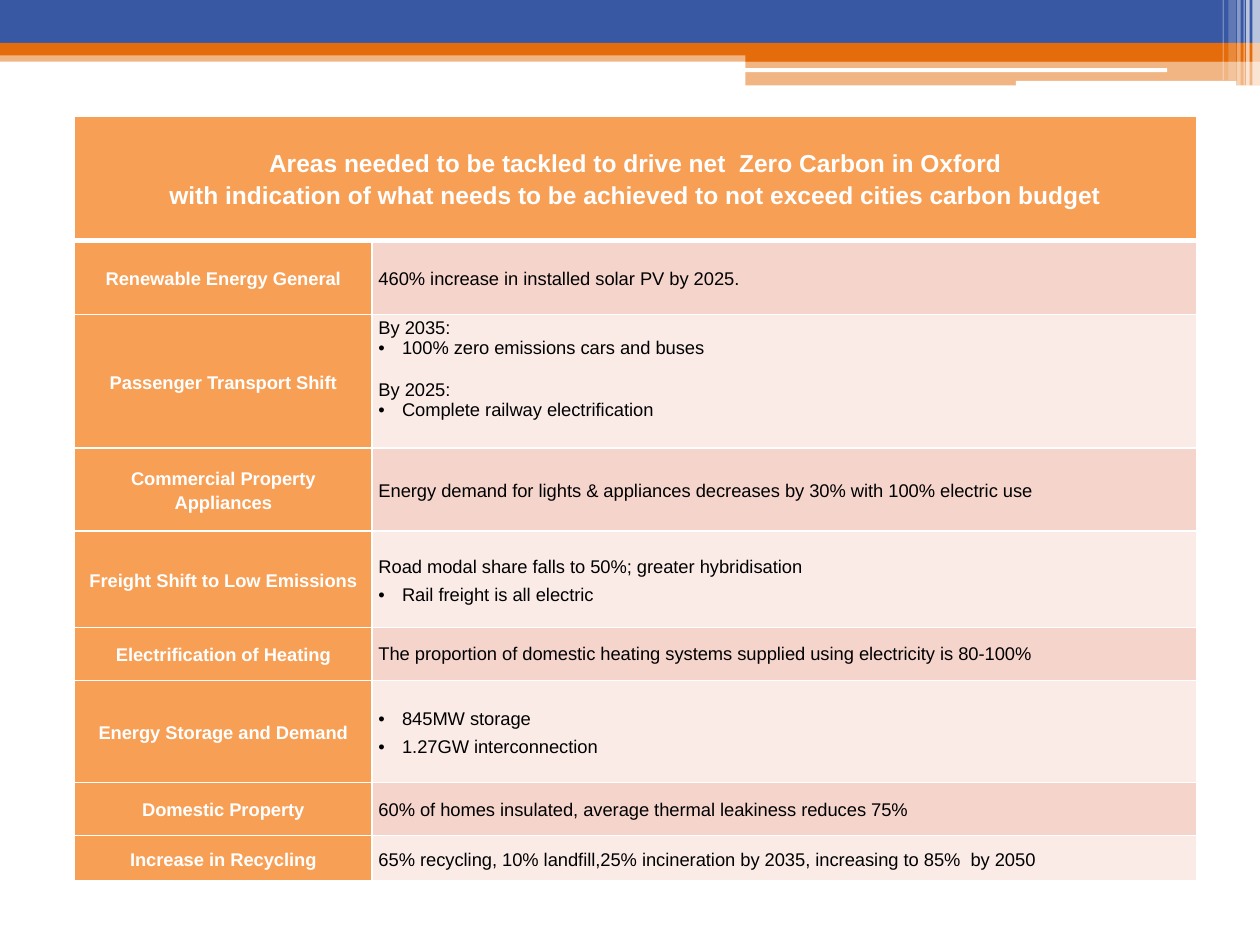
"""Build the Oxford net zero carbon slide with its table of target areas."""
from lxml import etree
from pptx import Presentation
from pptx import util as u
from pptx.dml import color as dml
from pptx.enum import shapes, text
from pptx.oxml import ns

COLOURS = {
    "blue": "3958A4", "orange": "E46C0A", "white": "FFFFFF", "black": "000000",
    "label": "F89F56", "odd": "F5D4CC", "even": "FAEBE7",
}
FONT = "Arial"
SPACING = 1.15
INDENT = 13.5
HEADING = [
    "Areas needed to be tackled to drive net  Zero Carbon in Oxford",
    "with indication of what needs to be achieved to not exceed cities carbon budget",
]
HEADING_HEIGHT = 71.2
COLUMN_WIDTHS = [170, 471]
AREAS = [
    (42.5, "Renewable Energy General",
     [{"words": "460% increase in installed solar PV by 2025."}]),
    (76.2, "Passenger Transport Shift",
     [{"words": "By 2035:", "spacing": 1},
      {"words": "100% zero emissions cars and buses", "bullet": True, "spacing": 1},
      {"words": "By 2025:", "spacing": 1, "before": 12},
      {"words": "Complete railway electrification", "bullet": True, "spacing": 1}]),
    (47.4, "Commercial Property Appliances",
     [{"words": "Energy demand for lights & appliances decreases by 30% with 100% electric use"}]),
    (55.2, "Freight Shift to Low Emissions",
     [{"words": "Road modal share falls to 50%; greater hybridisation", "after": 2.5},
      {"words": "Rail freight is all electric", "bullet": True}]),
    (30.2, "Electrification of Heating",
     [{"words": "The proportion of domestic heating systems supplied using electricity is 80-100%",
       "spacing": 1}]),
    (58.4, "Energy Storage and Demand",
     [{"words": "845MW storage", "bullet": True, "after": 2.4},
      {"words": "1.27GW interconnection", "bullet": True}]),
    (30.2, "Domestic Property",
     [{"words": "60% of homes insulated, average thermal leakiness reduces 75%"}]),
    (25.9, "Increase in Recycling",
     [{"words": "65% recycling, 10% landfill,25% incineration by 2035, increasing to 85%  by 2050"}]),
]
BOTTOM_INSETS = {"Passenger Transport Shift": 14}
BANDS = [
    (0, 28.8, 720, 6.5, "orange", 50),
    (0, 0, 720, 24.5, "blue", 100),
    (0, 24.5, 720, 7.2, "orange", 100),
    (426, 28, 294, 7.2, "orange", 100),
    (426, 34.9, 294, 14, "orange", 50),
]
ROUNDED_BARS = [(425.5, 39, 241.5, 2.2), (580.5, 46.2, 126, 2.8)]
STRIPES = [
    (715.7, 4.3, 49, 65), (712.1, 2, 49, 65), (710.6, 0.7, 49, 60),
    (707, 2, 49, 40), (702, 4.3, 46, 20), (698.7, 0.7, 46, 30),
]


def rgb(name):
    """Return the named palette colour."""
    return dml.RGBColor.from_string(COLOURS[name])


def add_bar(slide, left, top, width, height, colour, opacity=100,
            kind=shapes.MSO_SHAPE.RECTANGLE):
    """Add a borderless bar with the given opacity in percent."""
    shape = slide.shapes.add_shape(
        kind, u.Pt(left), u.Pt(top), u.Pt(width), u.Pt(height))
    shape.shadow.inherit = False
    shape.fill.solid()
    shape.fill.fore_color.rgb = rgb(colour)
    shape.line.fill.background()
    if opacity < 100:
        fill = shape._element.spPr.find(f"{ns.qn('a:solidFill')}/{ns.qn('a:srgbClr')}")
        etree.SubElement(fill, ns.qn("a:alpha"), val=str(opacity * 1000))
    return shape


def add_banner(slide):
    """Draw the coloured banner and the pale stripes at its right end."""
    for band in BANDS:
        add_bar(slide, *band)
    for bar in ROUNDED_BARS:
        add_bar(slide, *bar, "white", kind=shapes.MSO_SHAPE.ROUNDED_RECTANGLE)
    for left, width, height, opacity in STRIPES:
        add_bar(slide, left, 0, width, height, "white", opacity)


def set_borders(cell, bottom=1):
    """Give the cell white borders, with its own bottom width."""
    properties = cell._tc.get_or_add_tcPr()
    for index, side in enumerate("LRTB"):
        width = bottom if side == "B" else 1
        line = etree.Element(ns.qn(f"a:ln{side}"), w=str(u.Pt(width)))
        fill = etree.SubElement(line, ns.qn("a:solidFill"))
        etree.SubElement(fill, ns.qn("a:srgbClr"), val=COLOURS["white"])
        properties.insert(index, line)


def set_bullet(paragraph):
    """Give the paragraph a round bullet and a hanging indent."""
    properties = paragraph._p.get_or_add_pPr()
    properties.set("marL", str(u.Pt(INDENT)))
    properties.set("indent", str(-u.Pt(INDENT)))
    etree.SubElement(properties, ns.qn("a:buFont"), typeface=FONT)
    etree.SubElement(properties, ns.qn("a:buChar"), char="•")


def add_line(paragraph, words, size, colour, bold, align,
             spacing=SPACING, bullet=False, before=0, after=0):
    """Write one formatted line of text into the paragraph."""
    paragraph.alignment = align
    paragraph.line_spacing = float(spacing)
    paragraph.space_before = u.Pt(before)
    paragraph.space_after = u.Pt(after)
    if bullet:
        set_bullet(paragraph)
    run = paragraph.add_run()
    run.text = words
    run.font.name = FONT
    run.font.size = u.Pt(size)
    run.font.bold = bold
    run.font.color.rgb = rgb(colour)


def fill_cell(cell, lines, fill, size=10.5, label=False, inset=0, border=1):
    """Style the cell and write its lines."""
    cell.margin_left = cell.margin_right = u.Pt(3.6)
    cell.margin_top = 0
    cell.margin_bottom = u.Pt(inset)
    cell.vertical_anchor = text.MSO_ANCHOR.MIDDLE
    cell.fill.solid()
    cell.fill.fore_color.rgb = rgb(fill)
    set_borders(cell, border)
    colour = "white" if label else "black"
    align = text.PP_ALIGN.CENTER if label else text.PP_ALIGN.LEFT
    frame = cell.text_frame
    for index, line in enumerate(lines):
        paragraph = frame.add_paragraph() if index else frame.paragraphs[0]
        add_line(paragraph, size=size, colour=colour, bold=label, align=align, **line)


def add_areas_table(slide):
    """Add the table of areas and their targets."""
    heights = [HEADING_HEIGHT] + [height for height, _, _ in AREAS]
    table = slide.shapes.add_table(
        len(heights), len(COLUMN_WIDTHS), u.Pt(42.7), u.Pt(66.2),
        u.Pt(sum(COLUMN_WIDTHS)), u.Pt(sum(heights))).table
    for column, width in zip(table.columns, COLUMN_WIDTHS):
        column.width = u.Pt(width)
    for row, height in zip(table.rows, heights):
        row.height = u.Pt(height)
    heading = table.cell(0, 0)
    heading.merge(table.cell(0, 1))
    fill_cell(heading, [{"words": words} for words in HEADING],
              "label", size=14, label=True, border=3)
    set_borders(table.cell(0, 1), 3)
    for index, (_, area, targets) in enumerate(AREAS, start=1):
        fill_cell(table.cell(index, 0), [{"words": area}], "label", label=True)
        fill_cell(table.cell(index, 1), targets, "odd" if index % 2 else "even",
                  inset=BOTTOM_INSETS.get(area, 0))


def main():
    """Create and save the presentation."""
    presentation = Presentation()
    presentation.slide_width = u.Pt(720)
    presentation.slide_height = u.Pt(540)
    slide = presentation.slides.add_slide(presentation.slide_layouts[6])
    add_banner(slide)
    add_areas_table(slide)
    presentation.save("out.pptx")


if __name__ == "__main__":
    main()
